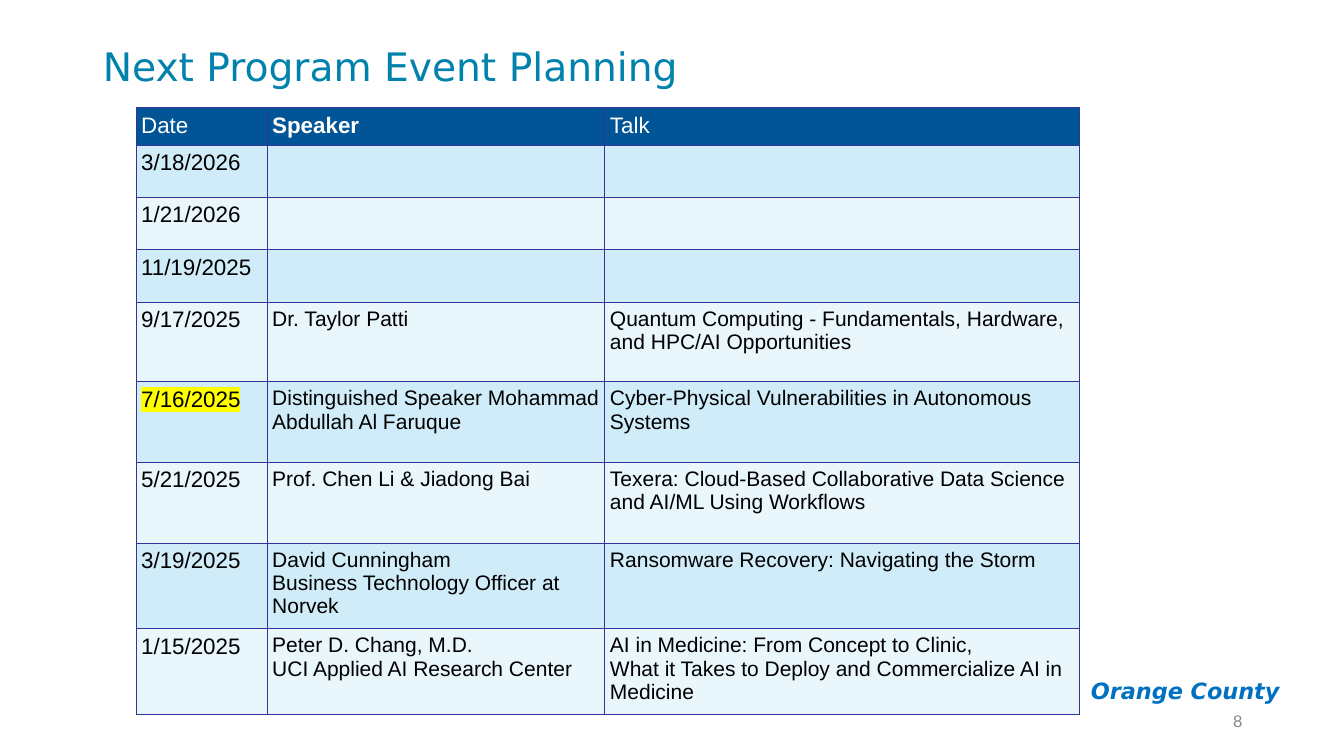
from pptx import Presentation
from pptx.dml.color import RGBColor
from pptx.enum.text import MSO_ANCHOR as Anchor, MSO_AUTO_SIZE as Fit, PP_ALIGN as Align
from pptx.oxml import parse_xml
from pptx.oxml.ns import nsdecls, qn
from pptx.util import Inches, Pt

TEAL = RGBColor(0x01, 0x82, 0xAC)
BLUE = RGBColor(0x00, 0x70, 0xC0)
NAVY = RGBColor(0x01, 0x55, 0x96)
DARK = RGBColor(0xD1, 0xEC, 0xF9)
PALE = RGBColor(0xE9, 0xF6, 0xFC)
EDGE = RGBColor(0x33, 0x33, 0x99)
GRAY = RGBColor(0x88, 0x88, 0x88)
WHITE = RGBColor(0xFF, 0xFF, 0xFF)
BLACK = RGBColor(0x00, 0x00, 0x00)
YELLOW = RGBColor(0xFF, 0xFF, 0x00)

HEADS = ["Date", "Speaker", "Talk"]
EVENTS = [
    ("3/18/2026", "", ""),
    ("1/21/2026", "", ""),
    ("11/19/2025", "", ""),
    ("9/17/2025", "Dr. Taylor Patti",
     "Quantum Computing - Fundamentals, Hardware, and HPC/AI Opportunities"),
    ("7/16/2025", "Distinguished Speaker Mohammad Abdullah Al Faruque",
     "Cyber-Physical Vulnerabilities in Autonomous Systems"),
    ("5/21/2025", "Prof. Chen Li & Jiadong Bai",
     "Texera: Cloud-Based Collaborative Data Science and AI/ML Using Workflows"),
    ("3/19/2025", "David Cunningham\nBusiness Technology Officer at Norvek",
     "Ransomware Recovery: Navigating the Storm"),
    ("1/15/2025", "Peter D. Chang, M.D.\vUCI Applied AI Research Center",
     "AI in Medicine: From Concept to Clinic,\v"
     "What it Takes to Deploy and Commercialize AI in Medicine"),
]
NEXT = "7/16/2025"
COLS = [1.3, 3.35, 4.71]
ROWS = [0.37] + [0.52] * 3 + [0.79] + [0.8] * 4


def write(frame, text, size=16, color=BLACK, font="Arial", bold=False,
          italic=False, align=Align.LEFT, space=None, mark=None):
    """Fill a text frame and format every run in it."""
    frame.text = text
    frame.word_wrap = True
    for par in frame.paragraphs:
        par.alignment = align
        par.line_spacing = space
        for run in par.runs:
            face = run.font
            face.name, face.size = font, Pt(size)
            face.bold, face.italic = bold, italic
            face.color.rgb = color
            if mark:
                glow = parse_xml(f'<a:highlight {nsdecls("a")}><a:srgbClr val="{mark}"/></a:highlight>')
                run._r.get_or_add_rPr().find(qn("a:solidFill")).addnext(glow)


def title(slide, x, y, w, h):
    """Place the slide title."""
    head = slide.shapes.title
    head.left, head.top, head.width, head.height = map(Inches, (x, y, w, h))
    frame = head.text_frame
    write(frame, "Next Program Event Planning", size=28, color=TEAL,
          font="DejaVu Sans", space=0.9)
    frame.auto_size = Fit.NONE
    frame.vertical_anchor = Anchor.MIDDLE


def label(slide, text, x, y, w, h, pad=0.05, **style):
    """Place a right-aligned line of text."""
    frame = slide.shapes.add_textbox(*map(Inches, (x, y, w, h))).text_frame
    frame.margin_top = frame.margin_bottom = Inches(pad)
    frame.vertical_anchor = Anchor.MIDDLE
    write(frame, text, align=Align.RIGHT, **style)


def border(cell):
    """Draw a thin line on each side of a cell."""
    props = cell._tc.get_or_add_tcPr()
    for side in "LRTB":
        props.append(parse_xml(
            f'<a:ln{side} {nsdecls("a")} w="{Pt(0.75)}"><a:solidFill>'
            f'<a:srgbClr val="{EDGE}"/></a:solidFill></a:ln{side}>'))


def agenda(slide, x, y):
    """Build the table of events with its top left corner at x, y."""
    box = map(Inches, (x, y, sum(COLS), sum(ROWS)))
    table = slide.shapes.add_table(len(ROWS), len(COLS), *box).table
    table.first_row = table.horz_banding = False
    for col, width in zip(table.columns, COLS):
        col.width = Inches(width)
    for row, height in zip(table.rows, ROWS):
        row.height = Inches(height)
    for i, texts in enumerate([HEADS, *EVENTS]):
        for j, text in enumerate(texts):
            cell = table.cell(i, j)
            border(cell)
            cell.fill.solid()
            cell.fill.fore_color.rgb = NAVY if i == 0 else DARK if i % 2 else PALE
            cell.margin_left = cell.margin_right = Inches(0.05)
            cell.margin_top = cell.margin_bottom = Inches(0.05)
            write(cell.text_frame, text, size=15 if i and j else 16,
                  color=BLACK if i else WHITE, bold=text == "Speaker",
                  mark=YELLOW if text == NEXT else None)


def main():
    """Build and save the slide."""
    deck = Presentation()
    deck.slide_width, deck.slide_height = Inches(13.33), Inches(7.5)
    slide = deck.slides.add_slide(deck.slide_layouts[5])
    label(slide, "Orange County", 10.51, 6.62, 2.28, 0.47, pad=0.1, size=16,
          color=BLUE, font="DejaVu Sans", bold=True, italic=True)
    title(slide, 0.92, 0.29, 11.5, 0.78)
    label(slide, "8", 9.42, 6.95, 3, 0.4, size=12, color=GRAY)
    agenda(slide, 1.35, 1.07)
    deck.save("out.pptx")


if __name__ == "__main__":
    main()
